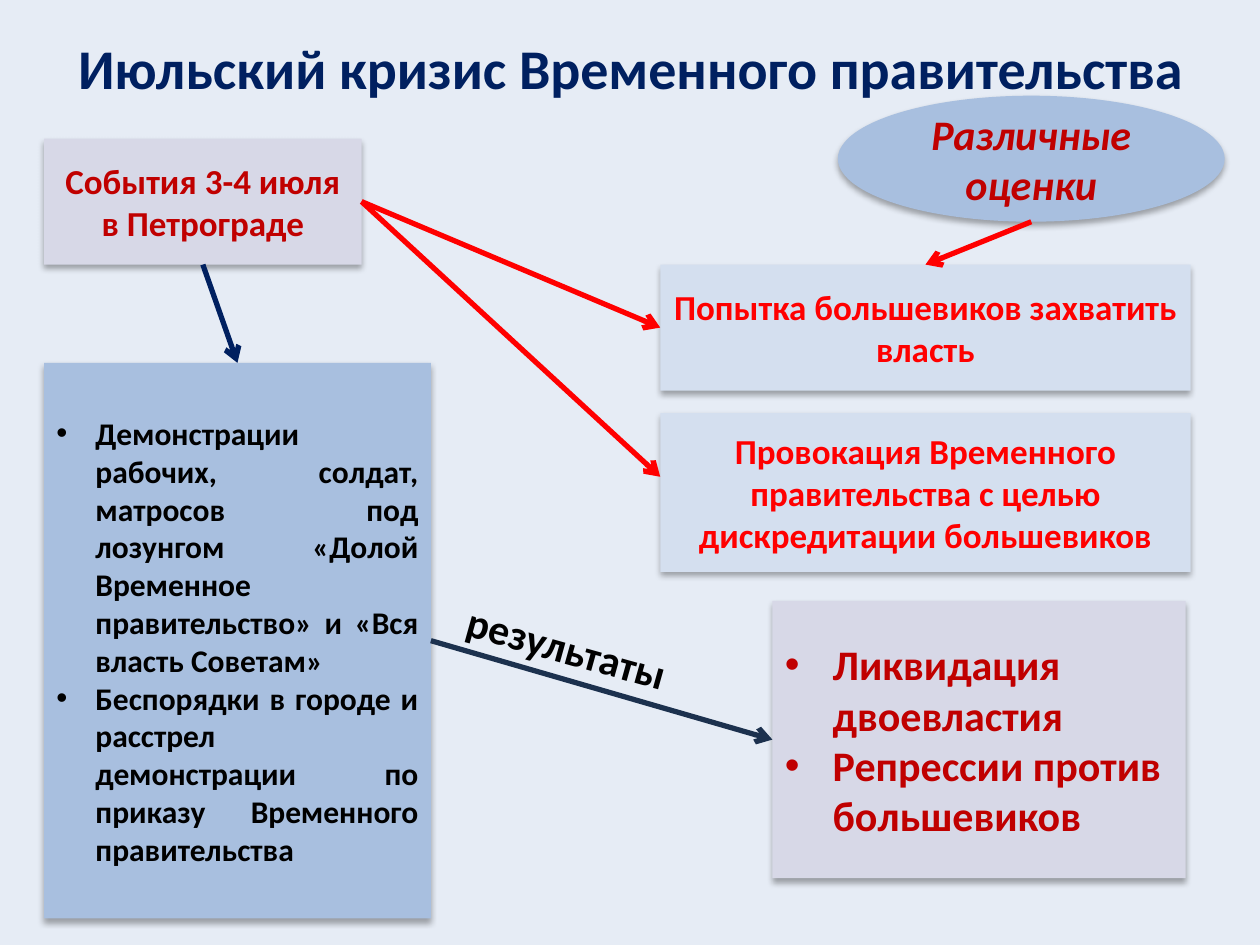
from lxml.etree import SubElement
from pptx import Presentation
from pptx.dml.color import RGBColor
from pptx.enum.shapes import MSO_CONNECTOR, MSO_SHAPE
from pptx.enum.text import MSO_ANCHOR, MSO_AUTO_SIZE, PP_ALIGN
from pptx.oxml.ns import qn
from pptx.util import Inches, Pt

FONT = "Calibri"
NAVY, RED, DARK_RED, BLACK = "002060", "FF0000", "C00000", "000000"
LILAC, BLUE, PALE = "D7D8E7", "A8BFDF", "D4DFEF"
BACKGROUND = "E6ECF5"
CENTER, LEFT, JUSTIFY = PP_ALIGN.CENTER, PP_ALIGN.LEFT, PP_ALIGN.JUSTIFY
RECTANGLE, OVAL = MSO_SHAPE.RECTANGLE, MSO_SHAPE.OVAL

TITLE = "Июльский кризис Временного правительства"
TITLE_AREA = (0.51, 0.13, 9, 0.8)
RESULT_LABEL = "результаты"
RESULT_AREA = (3.59, 4.89, 1.84, 0.5)

BOXES = {
    "events": dict(
        area=(0.35, 1.1, 2.52, 1), fill=LILAC, color=DARK_RED, size=20,
        lines=["События 3-4 июля в Петрограде"]),
    "unrest": dict(
        area=(0.35, 2.88, 3.07, 4.41), fill=BLUE, color=BLACK, size=18,
        align=JUSTIFY, indent=0.31,
        lines=["Демонстрации рабочих, солдат, матросов под лозунгом "
               "«Долой Временное правительство» и «Вся власть Советам»",
               "Беспорядки в городе и расстрел демонстрации по приказу "
               "Временного правительства"]),
    "opinions": dict(
        area=(6.65, 0.76, 3.07, 1), fill=BLUE, color=DARK_RED, size=24,
        kind=OVAL, italic=True, lines=["Различные оценки"]),
    "seizure": dict(
        area=(5.24, 2.1, 4.21, 1), fill=PALE, color=RED, size=20,
        lines=["Попытка большевиков захватить власть"]),
    "provocation": dict(
        area=(5.24, 3.28, 4.21, 1.26), fill=PALE, color=RED, size=20,
        lines=["Провокация Временного правительства с целью "
               "дискредитации большевиков"]),
    "outcome": dict(
        area=(6.13, 4.77, 3.28, 2.2), fill=LILAC, color=DARK_RED, size=24,
        align=LEFT, indent=0.38,
        lines=["Ликвидация двоевластия", "Репрессии против большевиков"]),
}

TOP, BOTTOM, LEFT_SIDE, RIGHT_SIDE = (0.5, 0), (0.5, 1), (0, 0.5), (1, 0.5)
ARROWS = [
    ("events", BOTTOM, "unrest", TOP, NAVY),
    ("opinions", BOTTOM, "seizure", TOP, RED),
    ("events", RIGHT_SIDE, "seizure", LEFT_SIDE, RED),
    ("events", RIGHT_SIDE, "provocation", (0, 0.4), RED),
    ("unrest", RIGHT_SIDE, "outcome", LEFT_SIDE, "1C314E"),
]


def rgb(color):
    return RGBColor.from_string(color)


def inches(values):
    return [Inches(value) for value in values]


def style(paragraph, size, color, align, italic=None):
    paragraph.alignment = align
    font = paragraph.font
    font.name, font.size, font.bold, font.italic = FONT, Pt(size), True, italic
    font.color.rgb = rgb(color)


def add_bullet(paragraph, indent):
    properties = paragraph._p.get_or_add_pPr()
    properties.set("marL", str(Inches(indent)))
    properties.set("indent", str(-Inches(indent)))
    bullet_font = SubElement(properties, qn("a:buFont"), typeface="Arial")
    bullet_font.addnext(SubElement(properties, qn("a:buChar"), char="•"))
    defaults = properties.find(qn("a:defRPr"))
    if defaults is not None:
        properties.append(defaults)


def add_shadow(shape):
    shape.shadow.inherit = False
    effects = shape._element.spPr.find(qn("a:effectLst"))
    shadow = SubElement(effects, qn("a:outerShdw"), blurRad=str(Pt(3.5)),
                        dist=str(Pt(2.2)), dir="5400000", rotWithShape="0")
    color = SubElement(shadow, qn("a:srgbClr"), val=BLACK)
    SubElement(color, qn("a:alpha"), val="32000")


def add_box(slide, area, fill, color, size, lines, kind=RECTANGLE,
            align=CENTER, indent=None, italic=None):
    shape = slide.shapes.add_shape(kind, *inches(area))
    shape.fill.solid()
    shape.fill.fore_color.rgb = rgb(fill)
    shape.line.fill.background()
    add_shadow(shape)
    frame = shape.text_frame
    frame.word_wrap = True
    frame.vertical_anchor = MSO_ANCHOR.MIDDLE
    frame.text = "\n".join(lines)
    for paragraph in frame.paragraphs:
        style(paragraph, size, color, align, italic)
        if indent:
            add_bullet(paragraph, indent)


def point_on(name, side):
    left, top, width, height = BOXES[name]["area"]
    return inches((left + side[0] * width, top + side[1] * height))


def add_arrow(slide, source, source_side, target, target_side, color):
    arrow = slide.shapes.add_connector(
        MSO_CONNECTOR.STRAIGHT, *point_on(source, source_side),
        *point_on(target, target_side))
    arrow.line.color.rgb = rgb(color)
    arrow.line.width = Pt(3)
    SubElement(arrow.line._get_or_add_ln(), qn("a:tailEnd"), type="arrow")
    SubElement(arrow._element.spPr, qn("a:effectLst"))


def main():
    presentation = Presentation()
    presentation.slide_width, presentation.slide_height = inches((10, 7.5))
    slide = presentation.slides.add_slide(presentation.slide_layouts[5])
    slide.background.fill.solid()
    slide.background.fill.fore_color.rgb = rgb(BACKGROUND)

    title = slide.shapes.title
    title.left, title.top, title.width, title.height = inches(TITLE_AREA)
    title.text_frame.text = TITLE
    title.text_frame.vertical_anchor = MSO_ANCHOR.MIDDLE
    style(title.text_frame.paragraphs[0], 32, NAVY, CENTER)

    for box in BOXES.values():
        add_box(slide, **box)
    for arrow in ARROWS:
        add_arrow(slide, *arrow)

    label = slide.shapes.add_textbox(*inches(RESULT_AREA))
    label.rotation = 15.6
    label.text_frame.word_wrap = False
    label.text_frame.auto_size = MSO_AUTO_SIZE.SHAPE_TO_FIT_TEXT
    label.text_frame.text = RESULT_LABEL
    style(label.text_frame.paragraphs[0], 24, BLACK, LEFT)

    presentation.save("out.pptx")


if __name__ == "__main__":
    main()
